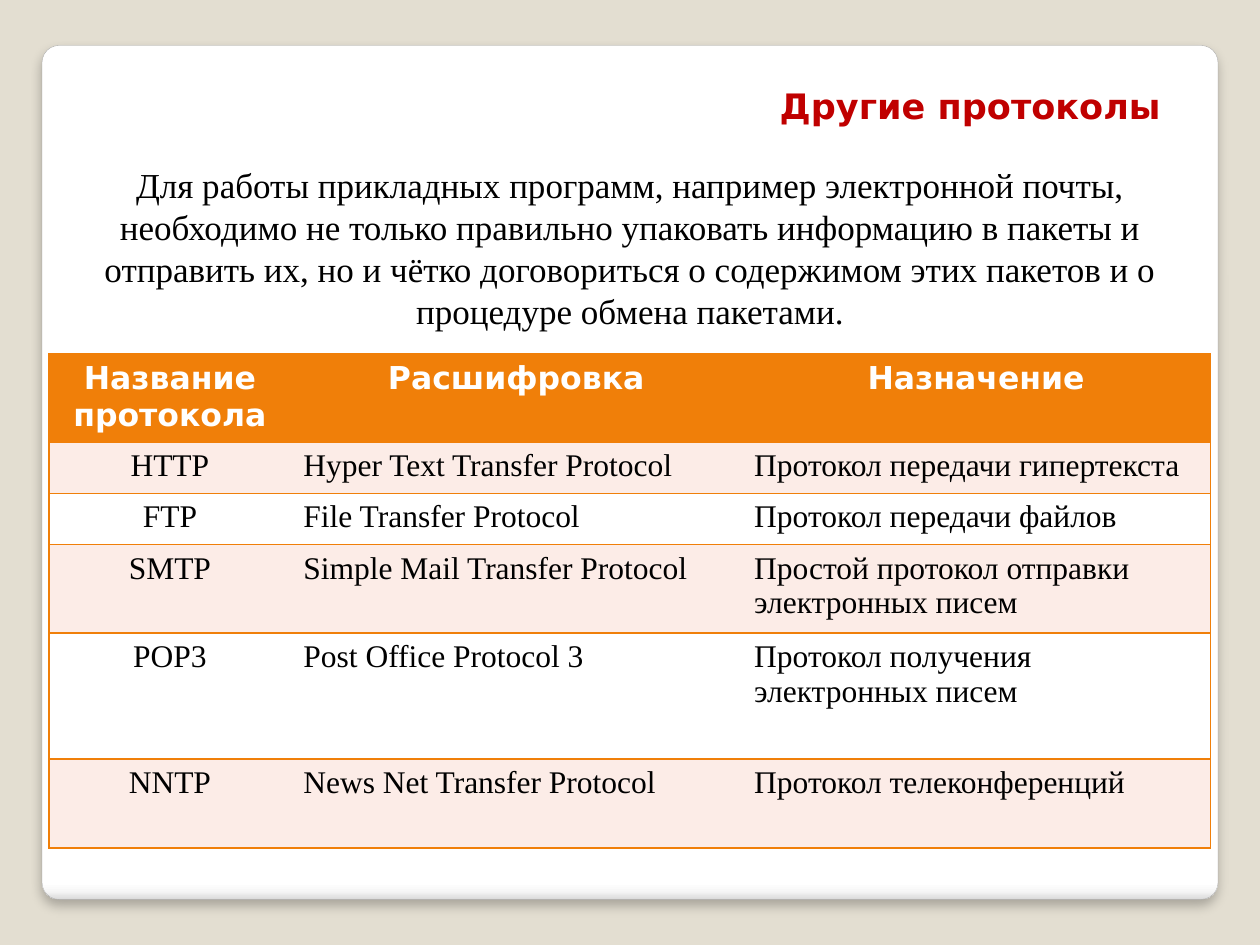
from dataclasses import dataclass

from lxml.etree import SubElement
from pptx import Presentation
from pptx.dml.color import RGBColor
from pptx.enum.shapes import MSO_SHAPE as Shape
from pptx.enum.text import MSO_AUTO_SIZE as AutoSize, PP_ALIGN as Align
from pptx.oxml.ns import qn
from pptx.util import Pt


@dataclass(frozen=True)
class Theme:
    backdrop: str = "E3DED1"
    panel_edge: str = "A4A4A4"
    panel_shades: tuple = ((0, "FFFFFF"), (98, "FFFFFF"), (99, "F7F7F7"), (100, "DADADA"))
    shadow: str = "000000"
    accent: str = "F07F09"
    bands: tuple = ("FCECE7", "FFFFFF")
    heading: str = "C00000"
    ink: str = "000000"
    inverse: str = "FFFFFF"
    display_font: str = "DejaVu Sans"
    text_font: str = "Times New Roman"
    large: int = 20
    medium: int = 18


HEADINGS = ("Название протокола", "Расшифровка", "Назначение")
PROTOCOLS = (
    ("HTTP", "Hyper Text Transfer Protocol", "Протокол передачи гипертекста"),
    ("FTP", "File Transfer Protocol", "Протокол передачи файлов"),
    ("SMTP", "Simple Mail Transfer Protocol", "Простой протокол отправки электронных писем"),
    ("POP3", "Post Office Protocol 3", "Протокол получения электронных писем"),
    ("NNTP", "News Net Transfer Protocol", "Протокол телеконференций"),
)
INTRO = (
    "Для работы прикладных программ, например электронной почты, необходимо "
    "не только правильно упаковать информацию в пакеты и отправить их, но и "
    "чётко договориться о содержимом этих пакетов и о процедуре обмена пакетами."
)


def add_color(parent, color, alpha=None):
    node = SubElement(parent, qn("a:srgbClr"), val=color)
    if alpha is not None:
        SubElement(node, qn("a:alpha"), val=str(alpha * 1000))


class SlideBuilder:
    def __init__(self, slide, theme):
        self.slide = slide
        self.theme = theme

    def backdrop(self):
        fill = self.slide.background.fill
        fill.solid()
        fill.fore_color.rgb = RGBColor.from_string(self.theme.backdrop)

    def panel(self, left, top, width, height):
        """Rounded sheet, shaded at its lower edge, with a soft shadow."""
        theme = self.theme
        sheet = self.slide.shapes.add_shape(
            Shape.ROUNDED_RECTANGLE, Pt(left), Pt(top), Pt(width), Pt(height))
        sheet.adjustments[0] = 0.02
        sheet.line.color.rgb = RGBColor.from_string(theme.panel_edge)
        sheet.line.width = Pt(0.16)
        sheet.fill.gradient()
        sheet.fill.gradient_angle = 270
        properties = sheet.element.spPr
        stops = properties.find(".//" + qn("a:gsLst"))
        for stop in list(stops):
            stops.remove(stop)
        for position, color in theme.panel_shades:
            add_color(SubElement(stops, qn("a:gs"), pos=str(position * 1000)), color)
        sheet.shadow.inherit = False
        shadow = SubElement(
            properties.find(qn("a:effectLst")), qn("a:outerShdw"),
            blurRad=str(Pt(6)), dist=str(Pt(4)), dir="5400000",
            algn="t", rotWithShape="0")
        add_color(shadow, theme.shadow, alpha=25)

    def fill_text(self, frame, text, color, align=Align.LEFT, **font_format):
        paragraph = frame.paragraphs[0]
        paragraph.alignment = align
        run = paragraph.add_run()
        run.text = text
        run.font.color.rgb = RGBColor.from_string(color)
        for attribute, value in font_format.items():
            setattr(run.font, attribute, value)

    def text(self, left, top, width, height, text, wrap=True, **text_format):
        box = self.slide.shapes.add_textbox(Pt(left), Pt(top), Pt(width), Pt(height))
        box.text_frame.word_wrap = wrap
        box.text_frame.auto_size = AutoSize.SHAPE_TO_FIT_TEXT
        self.fill_text(box.text_frame, text, **text_format)

    def borders(self, cell, sides):
        """Draw the named sides (letters of LRTB) and hide the others."""
        properties = cell._tc.get_or_add_tcPr()
        for side in "LRTB":
            line = SubElement(properties, qn(f"a:ln{side}"), w=str(Pt(1)))
            if side in sides:
                add_color(SubElement(line, qn("a:solidFill")), self.theme.accent)
            else:
                SubElement(line, qn("a:noFill"))

    def table(self, left, top, widths, heights, rows):
        theme = self.theme
        grid = self.slide.shapes.add_table(
            len(rows), len(widths), Pt(left), Pt(top),
            Pt(sum(widths)), Pt(sum(heights))).table
        for column, width in zip(grid.columns, widths):
            column.width = Pt(width)
        for row, height in zip(grid.rows, heights):
            row.height = Pt(height)
        header_format = dict(color=theme.inverse, name=theme.display_font, bold=True)
        body_format = dict(color=theme.ink, name=theme.text_font, bold=False)
        column_sides = ("LTB", "TB", "RTB")
        for r, texts in enumerate(rows):
            is_header = r == 0
            fill = theme.accent if is_header else theme.bands[(r - 1) % 2]
            text_format = header_format if is_header else body_format
            for c, text in enumerate(texts):
                cell = grid.cell(r, c)
                self.borders(cell, column_sides[c])
                cell.fill.solid()
                cell.fill.fore_color.rgb = RGBColor.from_string(fill)
                align = Align.CENTER if is_header or c == 0 else Align.LEFT
                self.fill_text(cell.text_frame, text, align=align,
                               size=Pt(theme.medium), **text_format)


def main():
    deck = Presentation()
    deck.slide_width, deck.slide_height = Pt(720), Pt(540)
    theme = Theme()
    builder = SlideBuilder(deck.slides.add_slide(deck.slide_layouts[6]), theme)
    builder.backdrop()
    builder.panel(24, 26, 672, 488)
    builder.text(438.5, 44.6, 232.5, 31.5, "Другие протоколы", wrap=False,
                 color=theme.heading, name=theme.display_font,
                 size=Pt(theme.large), bold=True)
    builder.text(22.5, 90, 675, 104.2, INTRO, align=Align.CENTER,
                 color=theme.ink, name=theme.text_font, size=Pt(theme.large))
    builder.table(28, 202.4, widths=(138.2, 257.6, 268),
                  heights=(50.2, 29.2, 29.2, 50.2, 72, 51),
                  rows=(HEADINGS, *PROTOCOLS))
    deck.save("out.pptx")


if __name__ == "__main__":
    main()
